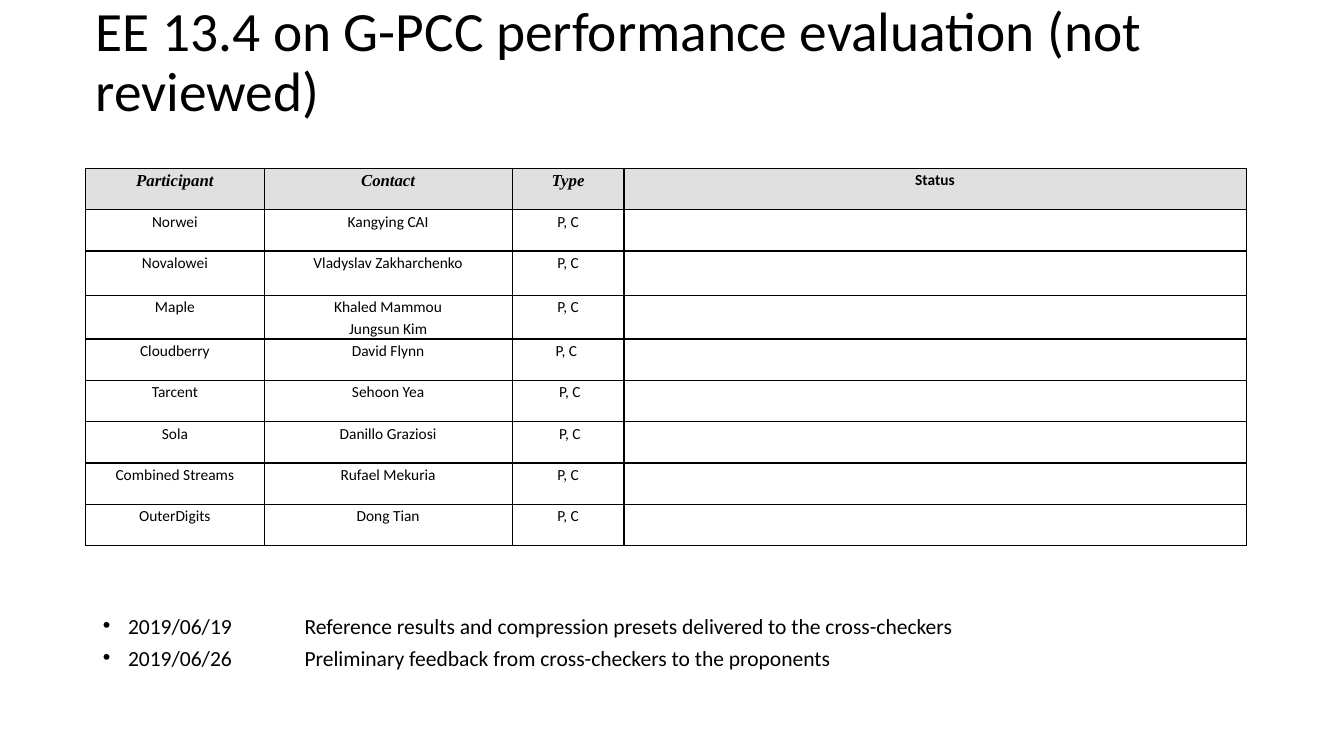
"""Build the EE 13.4 slide: participant table and delivery dates."""
from dataclasses import dataclass

from lxml.etree import SubElement
from pptx import Presentation
from pptx.dml.color import RGBColor
from pptx.enum.text import MSO_ANCHOR, MSO_AUTO_SIZE, PP_ALIGN
from pptx.oxml import parse_xml
from pptx.oxml.ns import nsdecls, qn
from pptx.util import Inches, Pt


@dataclass(frozen=True)
class Theme:
    ink: RGBColor = RGBColor(0, 0, 0)
    header_fill: RGBColor = RGBColor(0xE0, 0xE0, 0xE0)
    sans: str = "Calibri"
    serif: str = "Times New Roman"
    title: float = 39.6
    dates: float = 15.4
    header: float = 12
    cell: float = 11


THEME = Theme()


def style(paragraph, size, spacing, face=THEME.sans, bold=False, italic=False):
    """Set the type and line spacing of a paragraph."""
    paragraph.line_spacing = spacing
    font = paragraph.font
    font.name, font.size = face, Pt(size)
    font.bold, font.italic = bold, italic
    font.color.rgb = THEME.ink


def outline(cell):
    """Draw a thin line on all four sides of a cell."""
    for position, side in enumerate(("lnL", "lnR", "lnT", "lnB")):
        line = parse_xml(
            f'<a:{side} {nsdecls("a")} w="{Pt(1)}"><a:solidFill>'
            f'<a:srgbClr val="{THEME.ink}"/></a:solidFill></a:{side}>'
        )
        cell._tc.get_or_add_tcPr().insert(position, line)


prs = Presentation()
prs.slide_width, prs.slide_height = Inches(13.33), Inches(7.5)
slide = prs.slides.add_slide(prs.slide_layouts[1])

heading, dates = slide.placeholders
heading.left, heading.top = Inches(0.85), Inches(0.14)
heading.width, heading.height = Inches(11.5), Inches(0.98)
heading.text_frame.text = "EE 13.4 on G-PCC performance evaluation (not reviewed)"
heading.text_frame.vertical_anchor = MSO_ANCHOR.MIDDLE
heading.text_frame.auto_size = MSO_AUTO_SIZE.NONE
heading.text_frame.paragraphs[0].alignment = PP_ALIGN.LEFT
style(heading.text_frame.paragraphs[0], THEME.title, 0.9)

dates.left, dates.top = Inches(0.92), Inches(6.1)
dates.width, dates.height = Inches(11.5), Inches(0.66)
dates.text_frame.text = (
    "2019/06/19\tReference results and compression presets delivered to the cross-checkers\n"
    "2019/06/26\tPreliminary feedback from cross-checkers to the proponents"
)
dates.text_frame.auto_size = MSO_AUTO_SIZE.NONE
for milestone in dates.text_frame.paragraphs:
    properties = milestone._p.get_or_add_pPr()
    properties.set("marL", str(Inches(0.25)))
    properties.set("indent", str(-Inches(0.25)))
    SubElement(properties, qn("a:buFont"), typeface="Arial")
    SubElement(properties, qn("a:buChar"), char="•")
    tabs = SubElement(properties, qn("a:tabLst"))
    SubElement(tabs, qn("a:tab"), pos=str(Inches(2)), algn="l")
    milestone.space_before = Pt(10)
    style(milestone, THEME.dates, 0.7)

participants = [
    ("Participant", "Contact", "Type", "Status"),
    ("Norwei", "Kangying CAI", "P, C", ""),
    ("Novalowei", "Vladyslav Zakharchenko", "P, C", ""),
    ("Maple", "Khaled Mammou\nJungsun Kim", "P, C", ""),
    ("Cloudberry", "David Flynn", "P, C ", ""),
    ("Tarcent", "Sehoon Yea", " P, C", ""),
    ("Sola", "Danillo Graziosi", " P, C", ""),
    ("Combined Streams", "Rufael Mekuria", "P, C", ""),
    ("OuterDigits", "Dong Tian", "P, C", ""),
]
column_widths = (1.77, 2.46, 1.11, 6.17)
row_height = 0.41
taller_rows = {2: 0.44, 3: 0.43}

grid = slide.shapes.add_table(
    len(participants), len(column_widths),
    Inches(0.85), Inches(1.67), Inches(11.5), Inches(3.68),
).table
for column, width in zip(grid.columns, column_widths):
    column.width = Inches(width)

for r, entry in enumerate(participants):
    grid.rows[r].height = Inches(taller_rows.get(r, row_height))
    for c, wording in enumerate(entry):
        cell = grid.cell(r, c)
        cell.margin_left = cell.margin_right = Inches(0.05 if c < 2 else 0)
        cell.margin_top = cell.margin_bottom = 0
        paragraph = cell.text_frame.paragraphs[0]
        paragraph.text = wording
        paragraph.alignment = PP_ALIGN.CENTER
        if r == 0 and c < 3:
            style(paragraph, THEME.header, 1.15, THEME.serif, bold=True, italic=True)
        else:
            style(paragraph, THEME.cell, 1.15, bold=r == 0)
        if r == 0:
            cell.fill.solid()
            cell.fill.fore_color.rgb = THEME.header_fill
        else:
            cell.fill.background()
            if c < 2:
                paragraph.space_after = Pt(10)
        outline(cell)

prs.save("out.pptx")
